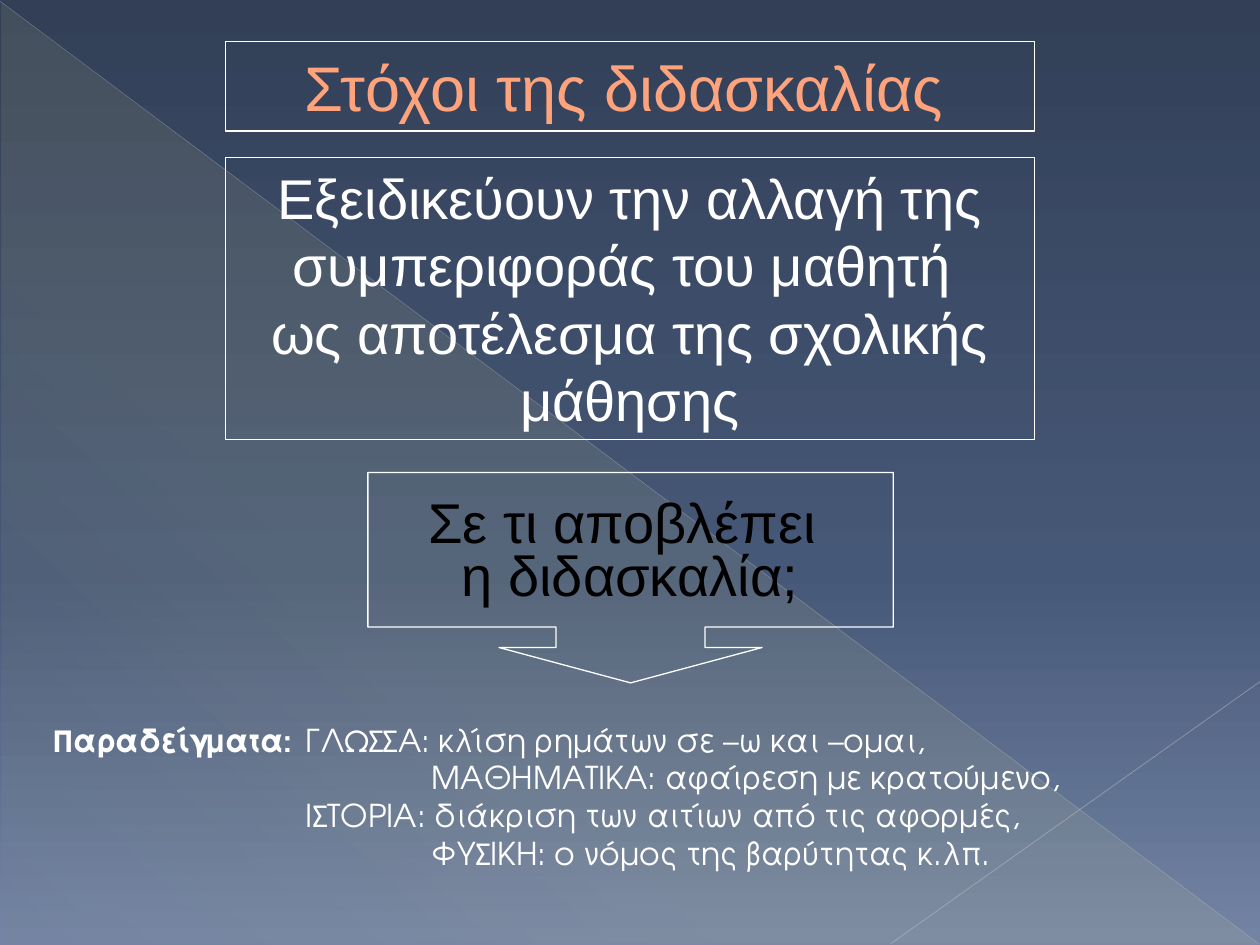
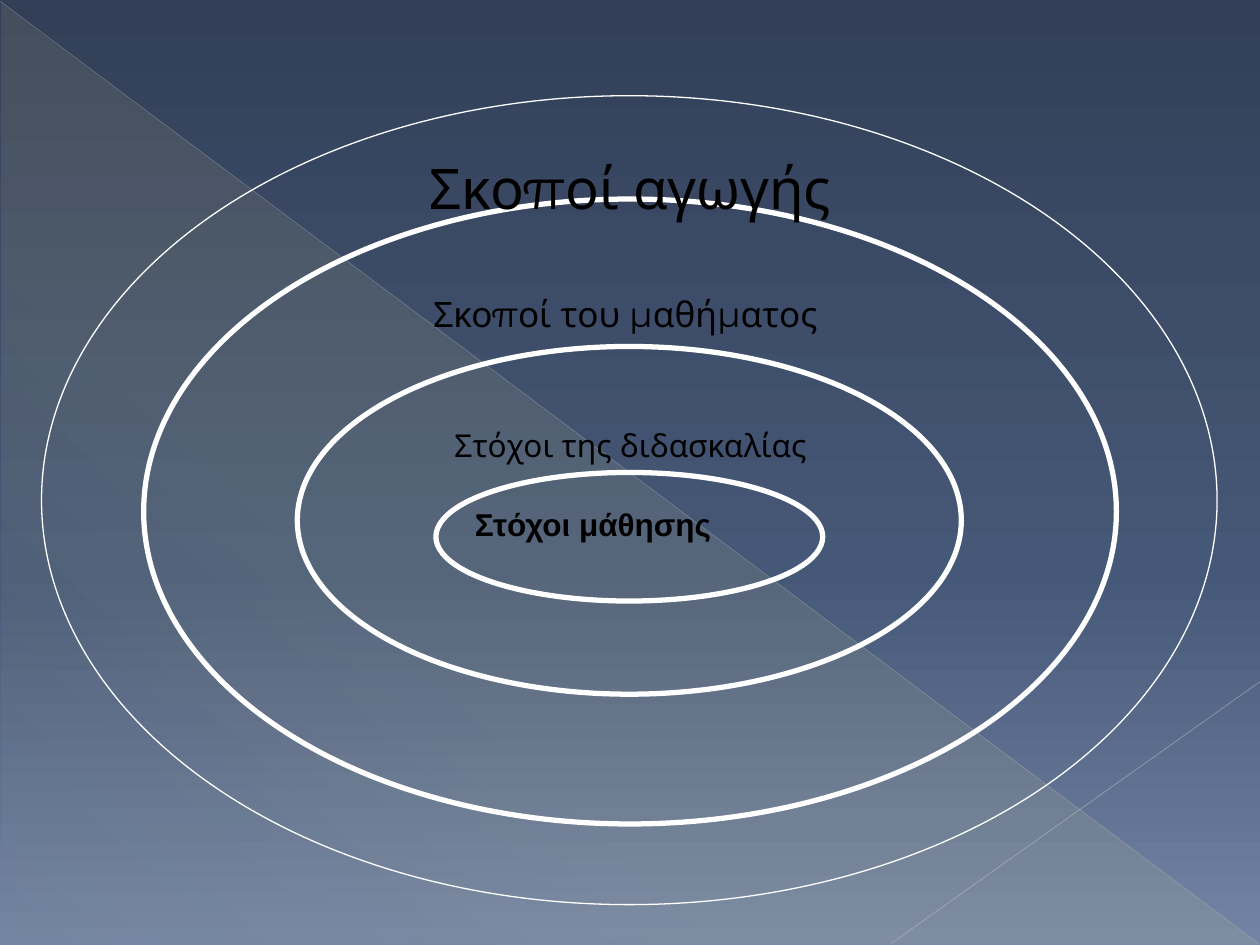
from lxml import etree
from pptx import Presentation
from pptx.dml.color import RGBColor
from pptx.enum.shapes import MSO_CONNECTOR, MSO_SHAPE
from pptx.enum.text import MSO_ANCHOR, PP_ALIGN
from pptx.oxml.ns import qn
from pptx.util import Inches, Pt

RECTANGLE = MSO_SHAPE.RECTANGLE
ELLIPSE = MSO_SHAPE.OVAL
TRIANGLE = MSO_SHAPE.RIGHT_TRIANGLE
CALLOUT = MSO_SHAPE.DOWN_ARROW_CALLOUT
STRAIGHT = MSO_CONNECTOR.STRAIGHT
LEFT, CENTER = PP_ALIGN.LEFT, PP_ALIGN.CENTER
TOP, MIDDLE = MSO_ANCHOR.TOP, MSO_ANCHOR.MIDDLE

WHITE, BLACK = "FFFFFF", "000000"
TITLE_COLOR, TITLE_OUTLINE = "FFA37C", "B05D26"
BACKGROUND_STOPS = [(0, "323F57", 100), (60, "465877", 100), (100, "7283A3", 100)]
GLOW_STOPS = [(0, "FFF39D", 10), (70, "FFF39D", 8), (100, "FFF39D", 1)]
BODY_FONT, RING_FONT, EXAMPLE_FONT = "Arial", "Montserrat", "TeX Gyre Adventor"


def color(value):
    return RGBColor.from_string(value)


def add_solid(parent, value, opacity=100):
    solid = etree.SubElement(parent, qn("a:solidFill"))
    add_color(solid, value, opacity)


def add_color(parent, value, opacity):
    element = etree.SubElement(parent, qn("a:srgbClr"), val=value)
    if opacity < 100:
        etree.SubElement(element, qn("a:alpha"), val=str(opacity * 1000))


def set_gradient(fill, properties, stops, angle):
    fill.gradient()
    gradient = properties.find(qn("a:gradFill"))
    for child in list(gradient):
        gradient.remove(child)
    stop_list = etree.SubElement(gradient, qn("a:gsLst"))
    for position, value, opacity in stops:
        stop = etree.SubElement(stop_list, qn("a:gs"), pos=str(position * 1000))
        add_color(stop, value, opacity)
    etree.SubElement(gradient, qn("a:lin"), ang=str(angle * 60000), scaled="0")


class Deck:
    def __init__(self):
        self.presentation = Presentation()
        self.presentation.slide_width = Inches(10)
        self.presentation.slide_height = Inches(7.5)
        self.slide = None

    def add_slide(self):
        self.slide = self.presentation.slides.add_slide(self.presentation.slide_layouts[6])
        fill = self.slide.background.fill
        properties = self.slide.element.find(".//" + qn("p:bgPr"))
        set_gradient(fill, properties, BACKGROUND_STOPS, 90)
        glow = self.shape(TRIANGLE, 0.01, 0.02, 9.99, 7.48, 0)
        set_gradient(glow.fill, glow._element.spPr, GLOW_STOPS, 133)
        self.line(0, 0.01, 9.99, 7.49, "BABDC4", 0.39, 35)
        self.line(10, 5.41, 7.07, 7.49, "C1C4CA", 0.47, 45)

    def shape(self, kind, left, top, width, height, line_width=0.75):
        shape = self.slide.shapes.add_shape(
            kind, Inches(left), Inches(top), Inches(width), Inches(height))
        shape.shadow.inherit = False
        shape.fill.background()
        if line_width:
            shape.line.color.rgb = color(WHITE)
            shape.line.width = Pt(line_width)
        else:
            shape.line.fill.background()
        return shape

    def line(self, start_x, start_y, end_x, end_y, value, width, opacity):
        connector = self.slide.shapes.add_connector(
            STRAIGHT, Inches(start_x), Inches(start_y), Inches(end_x), Inches(end_y))
        connector.line.color.rgb = color(value)
        connector.line.width = Pt(width)
        properties = connector._element.spPr
        tint = properties.find(".//" + qn("a:srgbClr"))
        etree.SubElement(tint, qn("a:alpha"), val=str(opacity * 1000))
        etree.SubElement(properties, qn("a:effectLst"))

    def text_box(self, left, top, width, height):
        return self.slide.shapes.add_textbox(
            Inches(left), Inches(top), Inches(width), Inches(height))

    def frame(self, shape, anchor=TOP, wrap=True):
        frame = shape.text_frame
        frame.word_wrap = wrap
        frame.vertical_anchor = anchor
        return frame

    def paragraph(self, frame, index, align=LEFT, spacing=None, margin=0, tab=0):
        paragraph = frame.add_paragraph() if index else frame.paragraphs[0]
        paragraph.alignment = align
        if spacing:
            paragraph.line_spacing = spacing
        properties = paragraph._p.get_or_add_pPr()
        properties.set("marL", str(Inches(margin)))
        properties.set("indent", "0")
        if tab:
            tabs = etree.SubElement(properties, qn("a:tabLst"))
            etree.SubElement(tabs, qn("a:tab"), pos=str(Inches(tab)), algn="l")
        return paragraph

    def run(self, paragraph, text, size, font, value, bold=False, outline=None, outline_width=0.75):
        run = paragraph.add_run()
        run.text = text
        run.font.size = Pt(size)
        run.font.name = font
        run.font.bold = bold
        run.font.color.rgb = color(value)
        if outline:
            line = etree.Element(qn("a:ln"), w=str(Pt(outline_width)))
            add_solid(line, outline)
            run._r.get_or_add_rPr().insert(0, line)

    def title(self, text):
        shape = self.shape(RECTANGLE, 1.79, 0.33, 6.42, 0.71)
        paragraph = self.paragraph(self.frame(shape, MIDDLE), 0, margin=0.53)
        self.run(paragraph, text, 36, BODY_FONT, TITLE_COLOR,
                 outline=TITLE_OUTLINE, outline_width=0.5)

    def statement(self, shape, lines, value, spacing=None, anchor=TOP):
        frame = self.frame(shape, anchor)
        for index, text in enumerate(lines):
            paragraph = self.paragraph(frame, index, CENTER, spacing)
            self.run(paragraph, text, 32, BODY_FONT, value)

    def examples(self, heading, lines):
        frame = self.frame(self.text_box(0.33, 5.67, 9.42, 1.31))
        for index, (start, text) in enumerate(lines):
            if index:
                paragraph = self.paragraph(frame, index, margin=start)
            else:
                paragraph = self.paragraph(frame, index, tab=start)
                self.run(paragraph, heading, 18, EXAMPLE_FONT, WHITE, bold=True)
                text = "\t" + text
            self.run(paragraph, text, 18, EXAMPLE_FONT, WHITE)

    def ring_label(self, left, top, width, height, text, size):
        frame = self.frame(self.text_box(left, top, width, height), wrap=False)
        paragraph = self.paragraph(frame, 0, CENTER)
        self.run(paragraph, text, size, RING_FONT, BLACK, outline=BLACK)


def build_goals(deck):
    deck.add_slide()
    callout = deck.shape(CALLOUT, 2.92, 3.75, 4.17, 1.67)
    for index, value in enumerate((0.708, 0.625, 0.168, 0.735)):
        callout.adjustments[index] = value
    deck.title("Στόχοι της διδασκαλίας")
    deck.examples("Παραδείγματα:", [
        (3, "ΓΛΩΣΣΑ: κλίση ρημάτων σε –ω και –ομαι,"),
        (3, "ΜΑΘΗΜΑΤΙΚΑ: αφαίρεση με κρατούμενο,"),
        (2, "ΙΣΤΟΡΙΑ: διάκριση των αιτίων από τις αφορμές,"),
        (3, "ΦΥΣΙΚΗ: ο νόμος της βαρύτητας κ.λπ."),
    ])
    deck.statement(deck.text_box(3.04, 3.92, 3.92, 0.95),
                   ["Σε τι αποβλέπει ", "η διδασκαλία;"], BLACK, spacing=0.8)
    deck.statement(deck.shape(RECTANGLE, 1.79, 1.25, 6.42, 2.24),
                   ["Εξειδικεύουν την αλλαγή της συμπεριφοράς του μαθητή ",
                    "ως αποτέλεσμα της σχολικής μάθησης"], WHITE)


def build_rings(deck):
    deck.add_slide()
    for left, top, width, height, line_width in (
        (0.33, 0.76, 9.33, 6.42, 0.75),
        (1.14, 1.58, 7.72, 4.96, 3),
        (2.36, 2.75, 5.27, 2.76, 3),
        (3.46, 3.75, 3.07, 1.02, 3),
    ):
        deck.shape(ELLIPSE, left, top, width, height, line_width)
    deck.ring_label(3.25, 3.33, 3.51, 0.83, "Στόχοι της διδασκαλίας", 18)
    deck.ring_label(2.64, 2.27, 4.72, 1.48, "Σκοποί του μαθήματος ", 20)
    deck.ring_label(3.18, 1.17, 3.65, 0.62, "Σκοποί αγωγής", 32)
    frame = deck.frame(deck.text_box(3.67, 3.96, 2.75, 0.5))
    deck.run(deck.paragraph(frame, 0), "Στόχοι μάθησης", 18, BODY_FONT, BLACK, bold=True)


def main():
    deck = Deck()
    build_goals(deck)
    build_rings(deck)
    deck.presentation.save("out.pptx")


if __name__ == "__main__":
    main()
